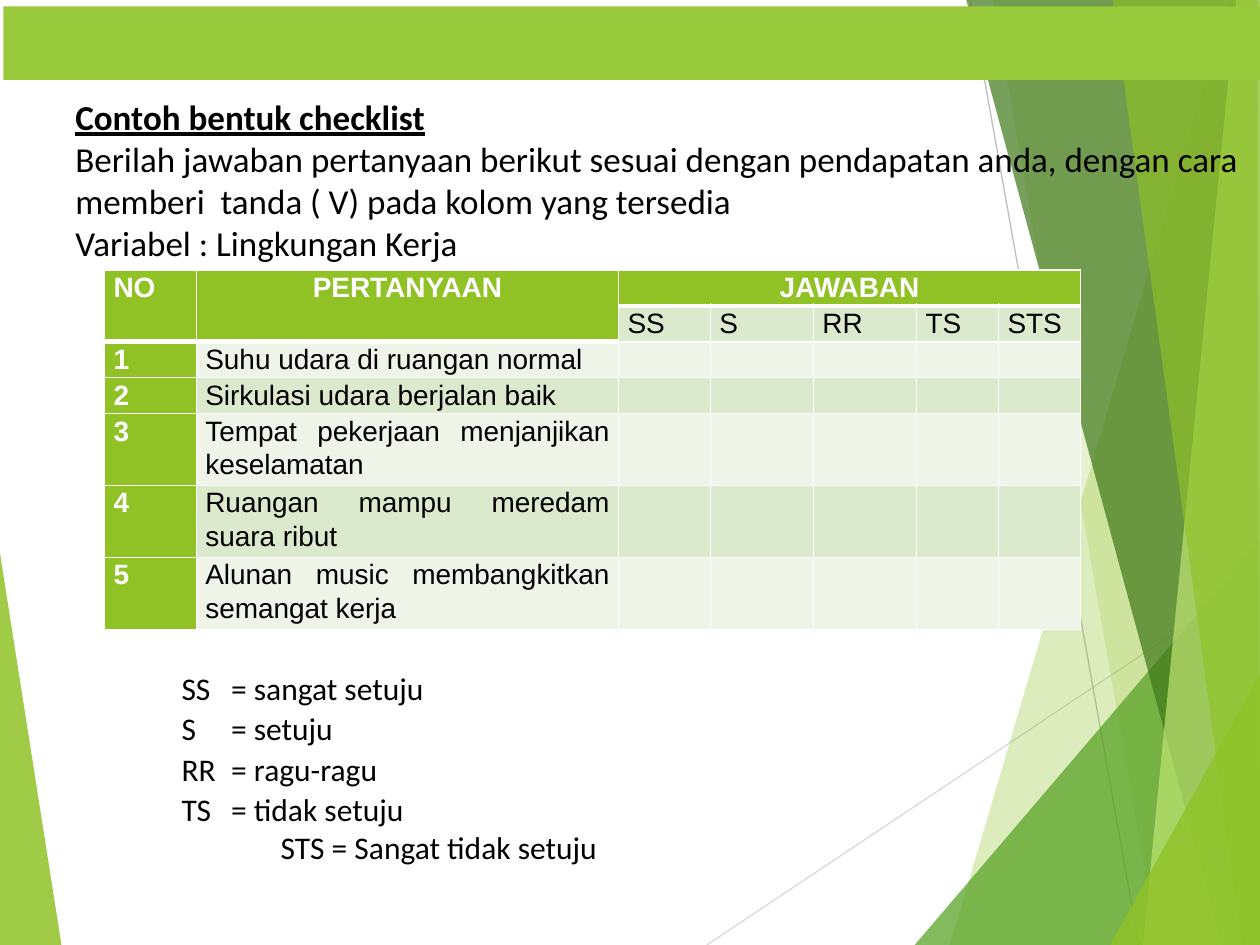
from lxml.etree import SubElement
from pptx import Presentation
from pptx.dml.color import RGBColor
from pptx.enum.shapes import MSO_CONNECTOR, MSO_SHAPE
from pptx.enum.text import MSO_AUTO_SIZE, PP_ALIGN
from pptx.oxml.ns import qn
from pptx.util import Cm, Pt

COLORS = {
    "lime": "90C226", "green": "54A021", "forest": "3F7819", "pale": "C0E474",
    "banner": "99CA3C", "light": "EEF4E8", "tint": "DBE9CD",
    "silver": "D9D9D9", "gray": "BFBFBF", "white": "FFFFFF", "black": "000000",
}


def style_text(para, size, font, color="black", bold=False):
    for span in para.runs:
        span.font.size = Pt(size)
        span.font.name = font
        span.font.bold = bold
        span.font.color.rgb = RGBColor.from_string(COLORS[color])


def add_border(cell, side, width):
    line = SubElement(cell._tc.get_or_add_tcPr(), qn(f"a:ln{side}"), w=str(Pt(width)))
    fill = SubElement(line, qn("a:solidFill"))
    SubElement(fill, qn("a:srgbClr"), val=COLORS["white"])


deck = Presentation()
deck.slide_width, deck.slide_height = Cm(25.4), Cm(19.05)
page = deck.slides.add_slide(deck.slide_layouts[6])

left_facet = [("lime", 85, [(0, 11.15), (1.24, 19.05), (0, 19.05)])]
right_facets = [
    ("lime", 30, [(24.77, 0), (19.15, 19.05), (25.4, 19.05), (25.4, 0)]),
    ("lime", 20, [(20.02, 0), (23.34, 19.05), (25.4, 19.05), (25.4, 0)]),
    ("green", 72, [(18.44, 19.05), (25.4, 10.9), (25.4, 19.05)]),
    ("forest", 70, [(19.48, 0), (24.64, 19.05), (25.4, 19.05), (25.4, 0)]),
    ("pale", 70, [(24.92, 0), (23.04, 19.05), (25.4, 19.05), (25.4, 0)]),
    ("lime", 65, [(22.43, 0), (25.04, 19.05), (25.4, 19.05), (25.35, 0)]),
    ("lime", 80, [(22.38, 19.05), (25.4, 13.59), (25.4, 19.05)]),
]
rays = [("silver", 14.25, 19.05, 25.4, 11.61), ("gray", 19.56, 0, 22.96, 19.05)]

for facets, lines in ((left_facet, rays), (right_facets, [])):
    for color, opacity, corners in facets:
        points = [(Cm(x), Cm(y)) for x, y in corners]
        builder = page.shapes.build_freeform(*points[0])
        builder.add_line_segments(points[1:])
        facet = builder.convert_to_shape()
        facet.shadow.inherit = False
        facet.line.fill.background()
        facet.fill.solid()
        facet.fill.fore_color.rgb = RGBColor.from_string(COLORS[color])
        tone = facet.fill._xPr.find(f".//{qn('a:srgbClr')}")
        SubElement(tone, qn("a:alpha"), val=str(opacity * 1000))
    for color, *ends in lines:
        ray = page.shapes.add_connector(MSO_CONNECTOR.STRAIGHT, *map(Cm, ends))
        ray.line.width = Pt(0.75)
        ray.line.color.rgb = RGBColor.from_string(COLORS[color])
        SubElement(ray._element.spPr, qn("a:effectLst"))

banner = page.shapes.add_shape(MSO_SHAPE.RECTANGLE, Cm(0.07), Cm(0.13), Cm(25.33), Cm(1.48))
banner.shadow.inherit = False
banner.line.fill.background()
banner.fill.solid()
banner.fill.fore_color.rgb = RGBColor.from_string(COLORS["banner"])

intro = page.shapes.add_textbox(Cm(1.27), Cm(1.8), Cm(24.13), Cm(10.52)).text_frame
intro.word_wrap = True
intro.auto_size = MSO_AUTO_SIZE.SHAPE_TO_FIT_TEXT
intro.text = "\n".join([
    "Contoh bentuk checklist",
    "Berilah jawaban pertanyaan berikut sesuai dengan pendapatan anda, "
    "dengan cara memberi  tanda ( V) pada kolom yang tersedia",
    "Variabel : Lingkungan Kerja",
])
for index, para in enumerate(intro.paragraphs):
    style_text(para, 20, "Calibri", bold=index == 0)
intro.paragraphs[0].runs[0].font.underline = True

questions = [
    "Suhu udara di ruangan normal",
    "Sirkulasi udara berjalan baik",
    "Tempat pekerjaan menjanjikan keselamatan",
    "Ruangan mampu meredam suara ribut",
    "Alunan music membangkitkan semangat kerja",
]
rows = [["NO", "PERTANYAAN", "JAWABAN"] + [""] * 4, ["", "", "SS", "S", "RR", "TS", "STS"]]
rows += [[str(number), question] + [""] * 5 for number, question in enumerate(questions, 1)]
widths = [1.85, 8.51, 1.85, 2.08, 2.08, 1.65, 1.65]
line_counts = [1, 1, 1, 1, 2, 2, 2]
row_unit = 0.72

table = page.shapes.add_table(
    len(rows), len(widths), Cm(2.11), Cm(5.44),
    Cm(sum(widths)), Cm(row_unit * sum(line_counts)),
).table
table.first_row = table.horz_banding = False
for column, width in zip(table.columns, widths):
    column.width = Cm(width)
for row, count in zip(table.rows, line_counts):
    row.height = Cm(row_unit * count)

for r, texts in enumerate(rows):
    for c, text in enumerate(texts):
        cell = table.cell(r, c)
        header = r == 0 or c == 0 or (r == 1 and c == 1)
        cell.margin_left = cell.margin_right = Cm(0.18)
        cell.margin_top = cell.margin_bottom = 0
        last_header_row = 1 if c < 2 else 0
        add_border(cell, "L", 1)
        add_border(cell, "R", 1)
        add_border(cell, "T", 3 if r == last_header_row + 1 else 1)
        add_border(cell, "B", 3 if r in (0, last_header_row) else 1)
        cell.fill.solid()
        fill = "lime" if header else "tint" if r % 2 else "light"
        cell.fill.fore_color.rgb = RGBColor.from_string(COLORS[fill])
        para = cell.text_frame.paragraphs[0]
        para.alignment = PP_ALIGN.CENTER if r == 0 and c else PP_ALIGN.JUSTIFY
        para.line_spacing = 1.07
        if text:
            para.text = text
            style_text(para, 16, "Arial", "white" if header else "black", header)
        else:
            SubElement(para._p, qn("a:endParaRPr"), sz="1600")

for first, last in (((0, 0), (1, 0)), ((0, 1), (1, 1)), ((0, 2), (0, 6))):
    table.cell(*first).merge(table.cell(*last))

legend = page.shapes.add_textbox(Cm(1.35), Cm(13.31), Cm(12.7), Cm(4.32)).text_frame
legend.word_wrap = True
legend.auto_size = MSO_AUTO_SIZE.SHAPE_TO_FIT_TEXT
legend.text = "\n".join([
    "SS\t= sangat setuju", "S\t= setuju", "RR\t= ragu-ragu", "TS\t= tidak setuju",
    "STS = Sangat tidak setuju",
])
for para in legend.paragraphs:
    style_text(para, 18, "Calibri")
    properties = para._p.get_or_add_pPr()
    if "\t" in para.text:
        para.alignment = PP_ALIGN.JUSTIFY
        para.line_spacing = 1.07
        properties.set("marL", str(Cm(3.06)))
        properties.set("indent", str(Cm(-1)))
    else:
        properties.set("marL", str(Cm(4.06)))
        properties.set("indent", "0")

deck.save("out.pptx")
